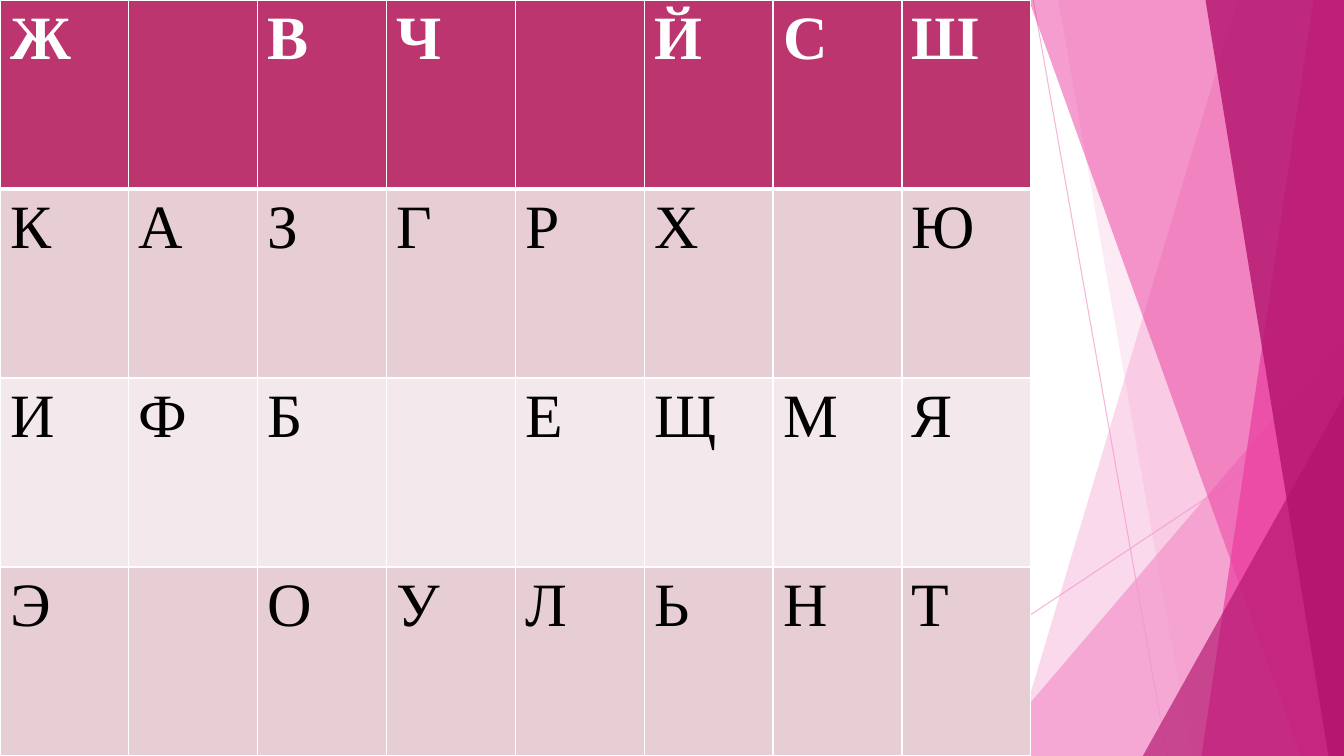
"""Build a slide with a grid of Cyrillic letters beside translucent pink facets."""
import lxml.etree
import pptx
import pptx.dml.color
import pptx.enum.shapes
import pptx.oxml.ns
import pptx.util

Cm = pptx.util.Cm
Pt = pptx.util.Pt
qn = pptx.oxml.ns.qn

COLORS = {
    "pale_pink": "F496CB",
    "pink": "EB3D9F",
    "crimson": "B2136D",
    "header": "BC356F",
    "odd_row": "E7CED5",
    "even_row": "F3E8EB",
    "white": "FFFFFF",
    "black": "000000",
}
WIDTH, HEIGHT = 33.87, 19.05


def paint(fill, color, opacity=100):
    fill.solid()
    fill.fore_color.rgb = pptx.dml.color.RGBColor.from_string(COLORS[color])
    if opacity < 100:
        tint = fill._xPr.find(qn("a:solidFill"))[0]
        lxml.etree.SubElement(tint, qn("a:alpha"), val=str(opacity * 1000))


def add_border(cell, side, points):
    border = lxml.etree.SubElement(
        cell._tc.get_or_add_tcPr(), qn("a:" + side), w=str(Pt(points)))
    solid = lxml.etree.SubElement(border, qn("a:solidFill"))
    lxml.etree.SubElement(solid, qn("a:srgbClr"), val=COLORS["white"])


deck = pptx.Presentation()
deck.slide_width, deck.slide_height = Cm(WIDTH), Cm(HEIGHT)
slide = deck.slides.add_slide(deck.slide_layouts[6])
paint(slide.background.fill, "white")

rays = [(26.04, 0, 29.41, HEIGHT), (WIDTH, 10.24, 20.62, HEIGHT)]
for ends in rays:
    ray = slide.shapes.add_connector(
        pptx.enum.shapes.MSO_CONNECTOR.STRAIGHT, *map(Cm, ends))
    ray.line.width = Pt(0.75)
    paint(ray.line.fill, "pale_pink", 70)
    lxml.etree.SubElement(ray._element.spPr, qn("a:effectLst"))

facets = [
    ("band", 31.19, 25.5, "pale_pink", 36),
    ("band", 26.67, 30.02, "pale_pink", 20),
    ("corner", 24.82, 8.46, "pale_pink", 72),
    ("band", 25.93, 32.79, "pink", 50),
    ("band", 33.1, 30.28, "pink", 70),
    ("band", 30.38, 33.48, "crimson", 80),
    ("corner", 28.8, 9.98, "crimson", 66),
]
for kind, first, second, color, opacity in facets:
    if kind == "band":
        outline = slide.shapes.build_freeform(Cm(first), 0)
        outline.add_line_segments([
            (Cm(WIDTH), 0), (Cm(WIDTH), Cm(HEIGHT)), (Cm(second), Cm(HEIGHT))])
        facet = outline.convert_to_shape()
    else:
        facet = slide.shapes.add_shape(
            pptx.enum.shapes.MSO_SHAPE.ISOSCELES_TRIANGLE,
            Cm(first), Cm(second), Cm(WIDTH - first), Cm(HEIGHT - second))
        facet.adjustments[0] = 1
    facet.shadow.inherit = False
    facet.line.fill.background()
    paint(facet.fill, color, opacity)

letter_rows = [
    ["Ж", "", "В", "Ч", "", "Й", "С", "Ш"],
    ["К", "А", "З", "Г", "Р", "Х", "", "Ю"],
    ["И", "Ф", "Б", "", "Е", "Щ", "М", "Я"],
    ["Э", "", "О", "У", "Л", "Ь", "Н", "Т"],
]
row_fills = ["header", "odd_row", "even_row", "odd_row"]
letter_grid = slide.shapes.add_table(
    len(letter_rows), len(letter_rows[0]), 0, 0, Cm(25.98), Cm(HEIGHT)).table

for row, letters in enumerate(letter_rows):
    for column, letter in enumerate(letters):
        cell = letter_grid.cell(row, column)
        add_border(cell, "lnL", 1)
        add_border(cell, "lnR", 1)
        add_border(cell, "lnT", 3 if row == 1 else 1)
        add_border(cell, "lnB", 3 if row == 0 else 1)
        paint(cell.fill, row_fills[row])
        if letter:
            run = cell.text_frame.paragraphs[0].add_run()
            run.text = letter
            run.font.name = "Times New Roman"
            run.font.size = Pt(44)
            run.font.bold = row == 0
            paint(run.font.fill, "white" if row == 0 else "black")

deck.save("out.pptx")
